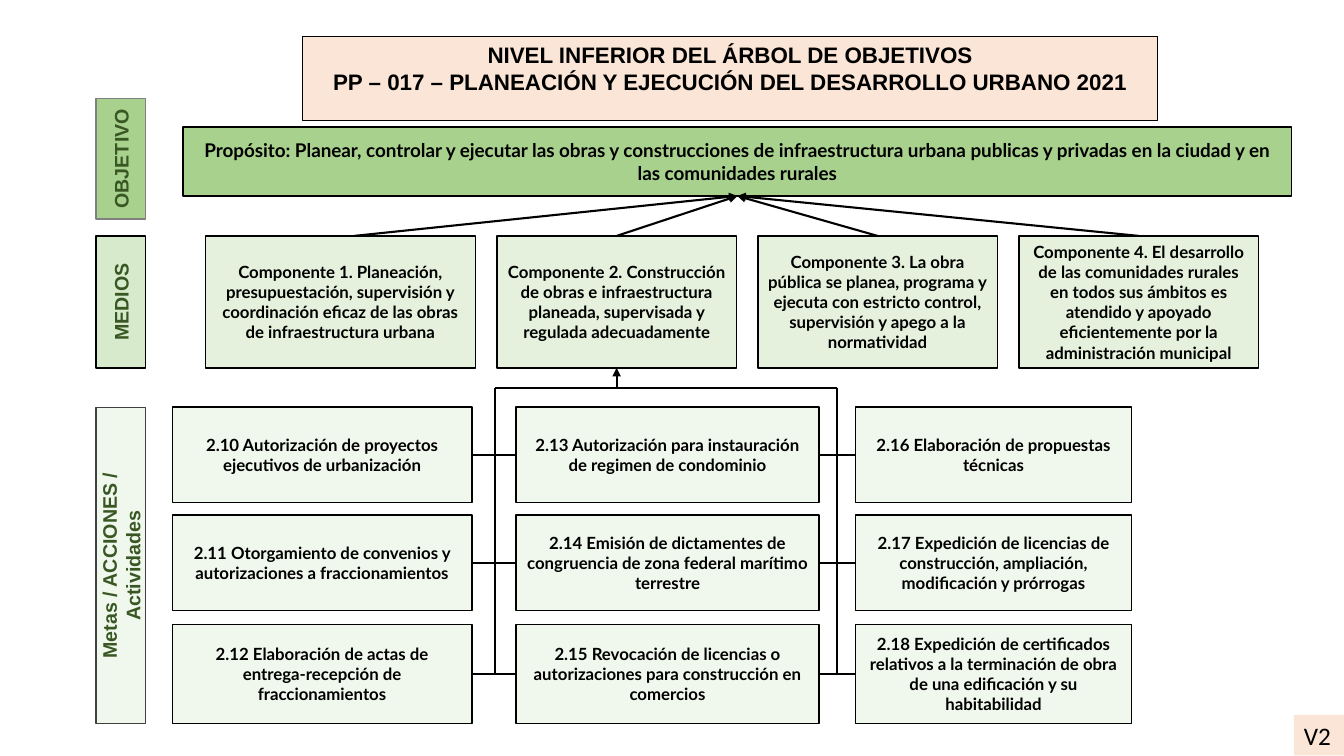
import pptx
import pptx.util
import pptx.dml.color
import pptx.enum.shapes
import pptx.enum.text
import pptx.oxml.ns
import lxml.etree

Pt = pptx.util.Pt
qn = pptx.oxml.ns.qn
SHAPE = pptx.enum.shapes.MSO_SHAPE
CONNECTOR = pptx.enum.shapes.MSO_CONNECTOR
ANCHOR = pptx.enum.text.MSO_ANCHOR
ALIGN = pptx.enum.text.PP_ALIGN
AUTO_SIZE = pptx.enum.text.MSO_AUTO_SIZE

COLORS = {
    "black": "000000",
    "peach": "FBE5D6",
    "green": "A9D18E",
    "pale": "C5E0B4",
    "dark_green": "385723",
    "gray": "808080",
    "dark_gray": "404040",
}

TITLE = [
    "NIVEL INFERIOR DEL ÁRBOL DE OBJETIVOS",
    "PP – 017 – PLANEACIÓN Y EJECUCIÓN DEL DESARROLLO URBANO 2021",
]
PURPOSE = (
    "Propósito: Planear, controlar y ejecutar las obras y construcciones de infraestructura "
    "urbana publicas y privadas en la ciudad y en las comunidades rurales"
)
LEVELS = [
    ("OBJETIVO", 70.5, 85.8, "green", 100, "gray"),
    ("MEDIOS", 168.5, 94.3, "green", 45, "black"),
    ("Metas / ACCIONES / Actividades", 291.3, 225.4, "pale", 25, "dark_gray"),
]
COMPONENTS = [
    (146.6, 193, "Componente 1. Planeación, presupuestación, supervisión y coordinación "
                 "eficaz de las obras de infraestructura urbana"),
    (355, 171, "Componente 2. Construcción de obras e infraestructura planeada, "
               "supervisada y regulada adecuadamente"),
    (541.3, 171, "Componente 3. La obra pública se planea, programa y ejecuta con "
                 "estricto control, supervisión y apego a la normatividad"),
    (727.9, 171, "Componente 4. El desarrollo de las comunidades rurales en todos sus ámbitos "
                 "es atendido y apoyado eficientemente por la administración municipal"),
]
ROWS = [(290.6, 68.2), (368, 68.2), (446.2, 70.5)]
COLUMNS = [
    (123.1, 214, [
        "2.10 Autorización de proyectos ejecutivos de urbanización",
        "2.11 Otorgamiento de convenios y autorizaciones a fraccionamientos",
        "2.12 Elaboración de actas de entrega-recepción de fraccionamientos",
    ]),
    (368.7, 216.3, [
        "2.13 Autorización para instauración de regimen de condominio",
        "2.14 Emisión de dictamentes de congruencia de zona federal marítimo terrestre",
        "2.15 Revocación de licencias o autorizaciones para construcción en comercios",
    ]),
    (611.3, 196.8, [
        "2.16 Elaboración de propuestas técnicas",
        "2.17 Expedición de licencias de construcción, ampliación, modificación y prórrogas",
        "2.18 Expedición de certificados relativos a la terminación de obra de una edificación "
        "y su habitabilidad",
    ]),
]


def rgb(name):
    return pptx.dml.color.RGBColor.from_string(COLORS[name])


def set_fill(sp, color, opacity=100):
    sp.fill.solid()
    sp.fill.fore_color.rgb = rgb(color)
    if opacity < 100:
        clr = sp._element.spPr.find(qn("a:solidFill")).find(qn("a:srgbClr"))
        lxml.etree.SubElement(clr, qn("a:alpha"), val=str(opacity * 1000))


def set_line(sp, color, width):
    sp.line.color.rgb = rgb(color)
    sp.line.width = Pt(width)


def set_text(tf, lines, font, size, color="black", bold=True, align=ALIGN.CENTER):
    tf.word_wrap = True
    for i, text in enumerate(lines):
        p = tf.add_paragraph() if i else tf.paragraphs[0]
        p.text = text
        p.alignment = align
        p.font.name = font
        p.font.size = Pt(size)
        p.font.bold = bold
        p.font.color.rgb = rgb(color)


def add_title(s):
    sp = s.shapes.title
    sp.left, sp.top, sp.width, sp.height = Pt(216.2), Pt(26), Pt(610.8), Pt(46)
    set_fill(sp, "peach")
    set_line(sp, "black", 0.75)
    set_text(sp.text_frame, TITLE, "Arial", 16)
    sp.text_frame.vertical_anchor = ANCHOR.TOP
    sp.text_frame.auto_size = AUTO_SIZE.SHAPE_TO_FIT_TEXT


def add_box(s, x, y, w, h, text, fill, opacity=100, line="black",
            font="Lato", size=12, color="black"):
    sp = s.shapes.add_shape(SHAPE.FLOWCHART_PROCESS, Pt(x), Pt(y), Pt(w), Pt(h))
    sp.shadow.inherit = False
    set_fill(sp, fill, opacity)
    set_line(sp, line, 1)
    set_text(sp.text_frame, [text], font, size, color)
    sp.text_frame.vertical_anchor = ANCHOR.MIDDLE
    return sp


def add_level(s, text, top, length, fill, opacity, line):
    thickness, center = 35.5, 86.3
    sp = add_box(s, center - length / 2, top + (length - thickness) / 2, length, thickness,
                 text, fill, opacity, line, "Arial", 14, "dark_green")
    sp.rotation = 270


def add_line(s, x1, y1, x2, y2, arrow=False, kind=CONNECTOR.STRAIGHT):
    c = s.shapes.add_connector(kind, Pt(x1), Pt(y1), Pt(x2), Pt(y2))
    set_line(c, "black", 1.5)
    if arrow:
        lxml.etree.SubElement(c.line._get_or_add_ln(), qn("a:tailEnd"), type="triangle")
    lxml.etree.SubElement(c._element.spPr, qn("a:effectLst"))
    return c


def add_activity_lines(s):
    left_x, right_x, target_x, bus_y = 353.4, 597.6, 440.5, 277
    centers = [top + height / 2 for top, height in ROWS]
    for x in (left_x, right_x):
        add_line(s, x, bus_y, x, centers[-1])
    for (x, w, _), (next_x, _, _) in zip(COLUMNS, COLUMNS[1:]):
        for y in centers:
            add_line(s, next_x, y, x + w, y)
    add_line(s, target_x, bus_y, left_x, bus_y)
    elbow = add_line(s, right_x, bus_y, target_x, 262.8, True, CONNECTOR.ELBOW)
    elbow._element.spPr.find(qn("a:prstGeom")).set("prst", "bentConnector2")


def add_version(s):
    sp = s.shapes.add_textbox(Pt(924.2), Pt(510.6), Pt(36), Pt(29))
    set_fill(sp, "peach")
    set_text(sp.text_frame, ["V2"], "Calibri", 18, bold=False, align=ALIGN.LEFT)
    sp.text_frame.auto_size = AUTO_SIZE.SHAPE_TO_FIT_TEXT


def main():
    prs = pptx.Presentation()
    prs.slide_width, prs.slide_height = Pt(960), Pt(540)
    s = prs.slides.add_slide(prs.slide_layouts[5])
    add_title(s)
    for level in LEVELS:
        add_level(s, *level)
    add_box(s, 130.7, 90.8, 792, 49.2, PURPOSE, "green", size=13.5)
    for x, w, text in COMPONENTS:
        add_line(s, x + w / 2 + (10 if w > 171 else 0), 168.5, 526.7, 140, True)
        add_box(s, x, 168.5, w, 94.3, text, "green", 30)
    for x, w, texts in COLUMNS:
        for (y, h), text in zip(ROWS, texts):
            add_box(s, x, y, w, h, text, "pale", 25)
    add_activity_lines(s)
    add_version(s)
    prs.save("out.pptx")


if __name__ == "__main__":
    main()
